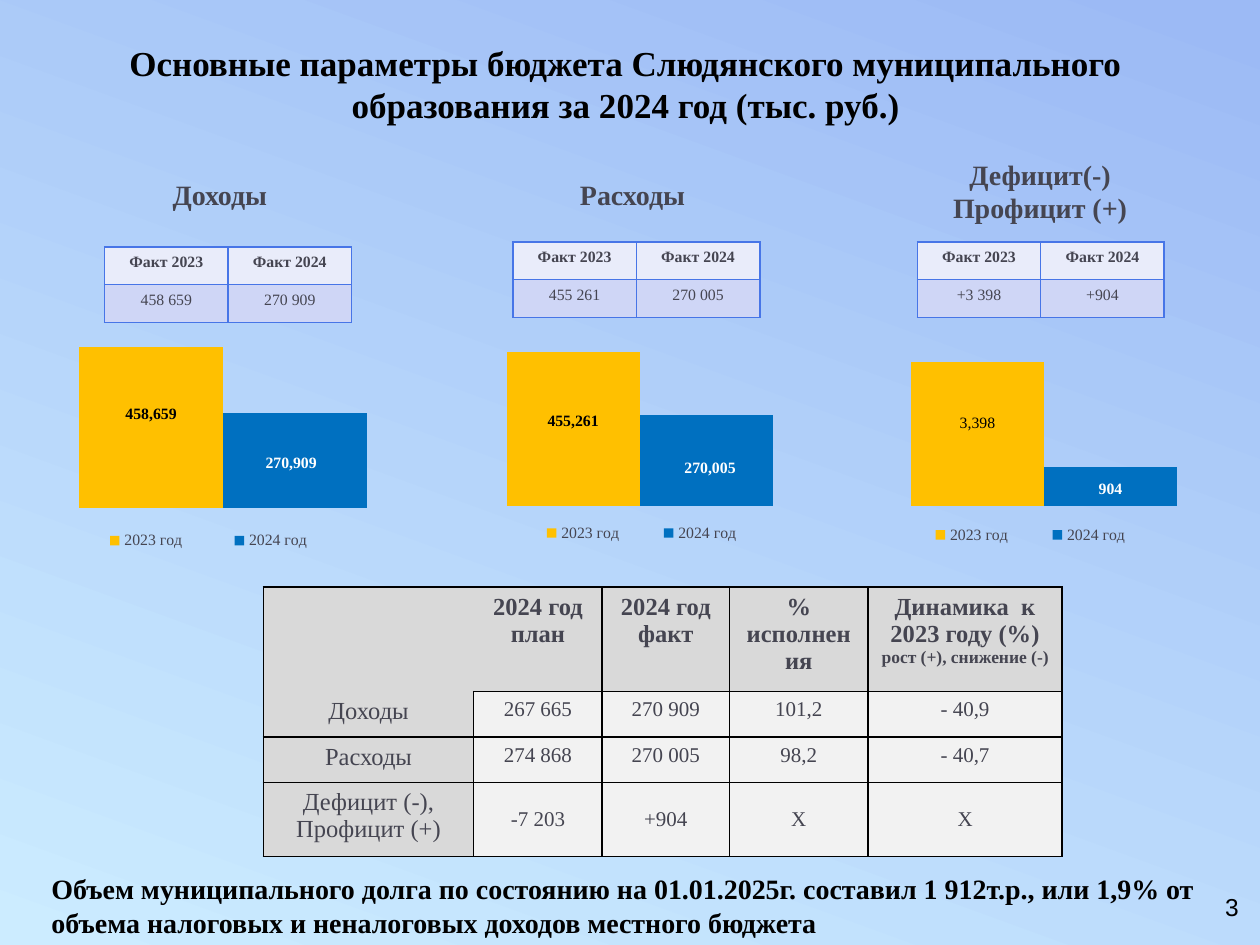
from lxml import etree
from pptx import Presentation
from pptx.chart import data as chart_data
from pptx.dml import color as dml
from pptx.enum import chart as charts, text
from pptx.oxml import ns
from pptx.util import Inches, Pt

GRAY = "454551"
BLACK = "000000"
WHITE = "FFFFFF"
SIDES = "LRTB"


def rgb(value):
    return dml.RGBColor.from_string(value)


def style_font(font, size, color, bold=False, name="Times New Roman"):
    font.name = name
    font.size = Pt(size)
    font.bold = bold
    font.color.rgb = rgb(color)


def write(frame, lines, size=16, color=GRAY, bold=True, name="Times New Roman",
          align=text.PP_ALIGN.CENTER, anchor=text.MSO_ANCHOR.TOP, sizes=None):
    frame.word_wrap = True
    frame.vertical_anchor = anchor
    for index, line in enumerate(lines.split("\n")):
        paragraph = frame.paragraphs[0] if index == 0 else frame.add_paragraph()
        paragraph.alignment = align
        run = paragraph.add_run()
        run.text = line
        style_font(run.font, sizes[index] if sizes else size, color, bold, name)


def add_text(slide, box, lines, **format):
    frame = slide.shapes.add_textbox(*map(Inches, box)).text_frame
    write(frame, lines, **format)


def set_borders(cell, color, hidden=""):
    properties = cell._tc.get_or_add_tcPr()
    for index, side in enumerate(SIDES):
        line = etree.Element(ns.qn("a:ln" + side), w=str(Pt(1)))
        if side in hidden:
            etree.SubElement(line, ns.qn("a:noFill"))
        else:
            fill = etree.SubElement(line, ns.qn("a:solidFill"))
            etree.SubElement(fill, ns.qn("a:srgbClr"), val=color)
        properties.insert(index, line)


def add_grid(slide, left, top, widths, heights):
    frame = slide.shapes.add_table(len(heights), len(widths), Inches(left), Inches(top),
                                   Inches(sum(widths)), Inches(sum(heights)))
    table = frame.table
    table.first_row = table.horz_banding = False
    for column, width in zip(table.columns, widths):
        column.width = Inches(width)
    for row, height in zip(table.rows, heights):
        row.height = Inches(height)
    return table


def fill_cell(cell, color):
    cell.fill.solid()
    cell.fill.fore_color.rgb = rgb(color)


def write_cell(cell, lines, **format):
    write(cell.text_frame, lines, **format)
    cell.vertical_anchor = format.get("anchor", text.MSO_ANCHOR.TOP)


def add_fact_table(slide, left, top, facts):
    table = add_grid(slide, left, top, [0.98] * 2, [0.3] * 2)
    rows = [("Факт 2023", "Факт 2024"), facts]
    for r, (row, color) in enumerate(zip(rows, ("E9ECFA", "CFD6F6"))):
        for c, value in enumerate(row):
            cell = table.cell(r, c)
            write_cell(cell, value, size=9, bold=r == 0)
            fill_cell(cell, color)
            set_borders(cell, "4775E7")


def add_summary_table(slide):
    rows = [
        ("", "2024 год план", "2024 год факт", "% исполнения",
         "Динамика  к 2023 году (%)\nрост (+), снижение (-)"),
        ("Доходы", "267 665", "270 909", "101,2", "- 40,9"),
        ("Расходы", "274 868", "270 005", "98,2", "- 40,7"),
        ("Дефицит (-), Профицит (+)", "-7 203", "+904", "Х", "Х"),
    ]
    hidden = {(0, 0): "RB", (0, 1): "L", (1, 0): "T"}
    table = add_grid(slide, 2.09, 4.66, [1.67, 1.02, 1.01, 1.1, 1.54], [0.83, 0.36, 0.36, 0.59])
    for r, row in enumerate(rows):
        for c, value in enumerate(row):
            cell = table.cell(r, c)
            heading = r == 0 or c == 0
            middle = r == 3 and c > 0
            if value:
                write_cell(cell, value, size=14 if heading else 12, bold=r == 0,
                           sizes=(14, 10) if "\n" in value else None,
                           anchor=text.MSO_ANCHOR.MIDDLE if middle else text.MSO_ANCHOR.TOP)
            fill_cell(cell, "D9D9D9" if heading else "F2F2F2")
            set_borders(cell, BLACK, hidden.get((r, c), ""))


def make_layout(**values):
    layout = etree.Element(ns.qn("c:layout"))
    manual = etree.SubElement(layout, ns.qn("c:manualLayout"))
    for key, value in values.items():
        etree.SubElement(manual, ns.qn("c:" + key), val=str(value))
    return layout


def place(parent, index, **values):
    for old in parent.findall(ns.qn("c:layout")):
        parent.remove(old)
    parent.insert(index, make_layout(**values))


def add_bars(slide, box, values, top_value, plot, legend, shifts, first_bold=True):
    source = chart_data.CategoryChartData(number_format="#,##0")
    source.categories = ["1"]
    for year, value in zip((2023, 2024), values):
        source.add_series(f"{year} год", [value])
    chart = slide.shapes.add_chart(charts.XL_CHART_TYPE.COLUMN_CLUSTERED,
                                   *map(Inches, box), source).chart
    style_font(chart.font, 9, GRAY)
    chart.has_title = False
    chart.value_axis.minimum_scale = 0
    chart.value_axis.maximum_scale = top_value
    chart.value_axis.has_major_gridlines = False
    chart.value_axis.visible = chart.category_axis.visible = False
    bars = chart.plots[0]
    bars.gap_width = 75
    bars.overlap = 0
    bars.vary_by_categories = False
    looks = zip(bars.series, ("FFC000", "0070C0"), (BLACK, WHITE), (first_bold, True), shifts)
    for series, color, label_color, bold, (dx, dy) in looks:
        series.format.fill.solid()
        series.format.fill.fore_color.rgb = rgb(color)
        label = series.points[0].data_label
        style_font(label.font, 9, label_color, bold)
        label.position = charts.XL_LABEL_POSITION.CENTER
        place(series._element.xpath(".//c:dLbl")[0], 1, x=dx, y=dy)
    chart.has_legend = True
    chart.legend.position = charts.XL_LEGEND_POSITION.BOTTOM
    chart.legend.include_in_layout = False
    style_font(chart.legend.font, 9, GRAY)
    place(chart.legend._element, 1, xMode="edge", yMode="edge",
          x=legend[0], y=legend[1], w=0.69, h=0.1)
    place(chart._chartSpace.xpath(".//c:plotArea")[0], 0, layoutTarget="inner",
          xMode="edge", yMode="edge", x=plot[0], y=plot[1], w=0.94, h=0.64)


def set_background(slide):
    fill = slide.background.fill
    fill.gradient()
    fill.gradient_angle = 70
    for stop, color, position in zip(fill.gradient_stops, ("CCECFF", "9CBAF5"), (0, 0.99)):
        stop.color.rgb = rgb(color)
        stop.position = position


def add_title(slide):
    title = slide.shapes.title
    title.left, title.top, title.width, title.height = map(Inches, (0.43, 0.28, 9.07, 0.77))
    title.text_frame.auto_size = text.MSO_AUTO_SIZE.NONE
    write(title.text_frame, "Основные параметры бюджета Слюдянского муниципального "
          "образования за 2024 год (тыс. руб.)", size=20, color=BLACK)


def main():
    deck = Presentation()
    deck.slide_width, deck.slide_height = Inches(10), Inches(7.5)
    slide = deck.slides.add_slide(deck.slide_layouts[5])
    set_background(slide)
    add_title(slide)

    add_bars(slide, (0.03, 2.49, 3.35, 2.17), (458659, 270909), 500000,
             (0.05, 0.07), (0.14, 0.78), ((0, -0.05), (-0.01, 0.01)))
    add_bars(slide, (3.47, 2.53, 3.09, 2.1), (455261, 270005), 500000,
             (0.05, 0.07), (0.18, 0.76), ((0, -0.03), (0.01, 0.03)))
    add_bars(slide, (6.71, 2.65, 3.09, 2.1), (3398, 904), 4000,
             (0.04, 0.01), (0.13, 0.71), ((0, -0.04), (0, 0.01)), first_bold=False)

    add_text(slide, (0.33, 1.36, 2.83, 0.37), "Доходы")
    add_text(slide, (3.56, 1.36, 2.92, 0.37), "Расходы")
    add_text(slide, (6.78, 1.2, 2.95, 0.64), "Дефицит(-)\nПрофицит (+)")

    add_fact_table(slide, 0.83, 1.96, ("458 659", "270 909"))
    add_fact_table(slide, 4.07, 1.92, ("455 261", "270 005"))
    add_fact_table(slide, 7.28, 1.92, ("+3 398", "+904"))
    add_summary_table(slide)

    add_text(slide, (0.31, 6.87, 9.32, 0.64),
             "Объем муниципального долга по состоянию на 01.01.2025г. составил 1 912т.р., "
             "или 1,9% от объема налоговых и неналоговых доходов местного бюджета",
             color=BLACK, align=text.PP_ALIGN.LEFT)
    add_text(slide, (7.6, 7.03, 2.33, 0.52), "3", size=14, color=BLACK, bold=False,
             name="Arial", align=text.PP_ALIGN.RIGHT)
    deck.save("out.pptx")


if __name__ == "__main__":
    main()
